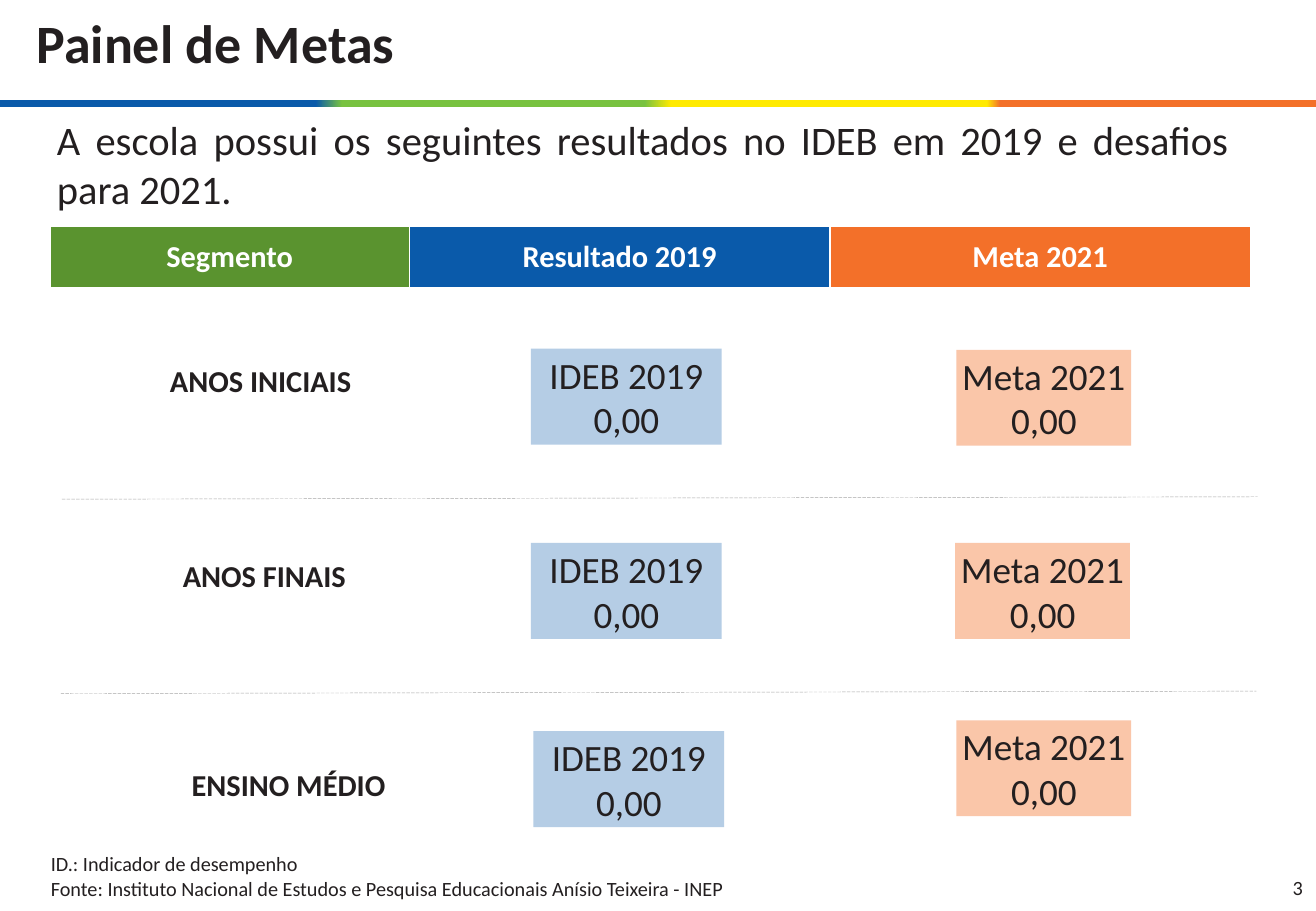
from lxml import etree
from pptx import Presentation
from pptx.dml.color import RGBColor
from pptx.enum.dml import MSO_LINE
from pptx.enum.shapes import MSO_CONNECTOR, MSO_SHAPE
from pptx.enum.text import MSO_ANCHOR, MSO_AUTO_SIZE, PP_ALIGN
from pptx.oxml.ns import qn
from pptx.util import Inches, Pt

LEFT, CENTER, RIGHT, JUSTIFY = PP_ALIGN.LEFT, PP_ALIGN.CENTER, PP_ALIGN.RIGHT, PP_ALIGN.JUSTIFY
TOP, MIDDLE, BOTTOM = MSO_ANCHOR.TOP, MSO_ANCHOR.MIDDLE, MSO_ANCHOR.BOTTOM
RECTANGLE, STRAIGHT = MSO_SHAPE.RECTANGLE, MSO_CONNECTOR.STRAIGHT
LONG_DASH, NO_AUTOFIT = MSO_LINE.LONG_DASH, MSO_AUTO_SIZE.NONE

INK = RGBColor(0x23, 0x1F, 0x20)
WHITE = RGBColor(0xFF, 0xFF, 0xFF)
BLUE = RGBColor(0x0A, 0x5A, 0xAA)
LIME = RGBColor(0x78, 0xC2, 0x40)
GREEN = RGBColor(0x5A, 0x93, 0x2F)
YELLOW = RGBColor(0xFF, 0xEA, 0x01)
ORANGE = RGBColor(0xF3, 0x70, 0x29)
PEACH = RGBColor(0xFA, 0xC6, 0xA9)
GRAY = RGBColor(0xA6, 0xA6, 0xA6)


def format_text(frame, lines, size, align=LEFT, anchor=TOP, bold=False, color=INK):
    frame.text = "\n".join(lines)
    frame.word_wrap = True
    frame.vertical_anchor = anchor
    for paragraph in frame.paragraphs:
        paragraph.alignment = align
        font = paragraph.font
        font.name, font.size, font.bold = "Calibri", Pt(size), bold
        font.color.rgb = color


def add_text(left, top, width, height, lines, size, **style):
    box = slide.shapes.add_textbox(Inches(left), Inches(top), Inches(width), Inches(height))
    format_text(box.text_frame, lines, size, **style)


prs = Presentation()
prs.slide_width, prs.slide_height = Inches(10.83), Inches(7.5)
slide = prs.slides.add_slide(prs.slide_layouts[5])

# Title and four-colour stripe
title = slide.shapes.title
title.left, title.top, title.width, title.height = Inches(0.2), Inches(0.03), Inches(5.62), Inches(0.64)
format_text(title.text_frame, ["Painel de Metas"], 32, bold=True)
title.text_frame.auto_size = NO_AUTOFIT

stripe = slide.shapes.add_shape(RECTANGLE, 0, Inches(0.82), prs.slide_width, Inches(0.06))
stripe.shadow.inherit = False
stripe.line.fill.background()
stripe.fill.gradient()
stripe.fill.gradient_angle = 0
stops = stripe._element.spPr.find(qn("a:gradFill")).find(qn("a:gsLst"))
for stop in list(stops):
    stops.remove(stop)
for color, start, end in [(BLUE, 0, 24), (LIME, 26, 49), (YELLOW, 51, 75), (ORANGE, 76, 100)]:
    for position in (start, end):
        stop = etree.SubElement(stops, qn("a:gs"), pos=str(position * 1000))
        etree.SubElement(stop, qn("a:srgbClr"), val=str(color))

add_text(0.37, 0.9, 9.84, 0.69,
         ["A escola possui os seguintes resultados no IDEB em 2019 e desafios para 2021."],
         24, align=JUSTIFY)

# Column headings
headings = [("Segmento", 2.96, GREEN), ("Resultado 2019", 3.46, BLUE), ("Meta 2021", 3.46, ORANGE)]
table = slide.shapes.add_table(1, len(headings), Inches(0.41), Inches(1.86),
                               Inches(9.88), Inches(0.51)).table
for column, (heading, width, color) in enumerate(headings):
    table.columns[column].width = Inches(width)
    cell = table.cell(0, column)
    cell.fill.solid()
    cell.fill.fore_color.rgb = color
    format_text(cell.text_frame, [heading], 18, align=CENTER, bold=True, color=WHITE)
    cell.vertical_anchor = MIDDLE

# One row per segment: (left, top) of the label, result and goal
segments = [
    ("ANOS INICIAIS", (0.51, 2.74), (4.37, 2.87), (7.87, 2.88)),
    ("ANOS FINAIS", (0.54, 4.34), (4.37, 4.47), (7.86, 4.47)),
    ("ENSINO MÉDIO", (0.74, 6.06), (4.39, 6.02), (7.87, 5.93)),
]
for segment, label_at, result_at, goal_at in segments:
    add_text(*label_at, 3.27, 0.79, [segment], 18, align=CENTER, anchor=MIDDLE, bold=True)
    for (left, top), width, value, color, opacity in [
        (result_at, 1.57, "IDEB 2019 0,00", BLUE, 30),
        (goal_at, 1.44, "Meta 2021 0,00", PEACH, 100),
    ]:
        card = slide.shapes.add_shape(RECTANGLE, Inches(left), Inches(top), Inches(width), Inches(0.79))
        card.shadow.inherit = False
        card.line.fill.background()
        card.fill.solid()
        card.fill.fore_color.rgb = color
        if opacity < 100:
            fill_color = card._element.spPr.find(qn("a:solidFill"))[0]
            etree.SubElement(fill_color, qn("a:alpha"), val=str(opacity * 1000))
        frame = card.text_frame
        frame.margin_left = frame.margin_right = frame.margin_top = frame.margin_bottom = 0
        format_text(frame, [value], 22, align=CENTER, anchor=MIDDLE)

for left, top in [(0.51, 4.11), (0.5, 5.71)]:
    divider = slide.shapes.add_connector(STRAIGHT, Inches(left), Inches(top),
                                         Inches(left + 9.84), Inches(top - 0.02))
    divider.line.color.rgb = GRAY
    divider.line.width = Pt(0.25)
    divider.line.dash_style = LONG_DASH
    etree.SubElement(divider._element.spPr, qn("a:effectLst"))

# Footer
add_text(0.32, 6.87, 6.26, 0.59,
         ["ID.: Indicador de desempenho",
          "Fonte: Instituto Nacional de Estudos e Pesquisa Educacionais Anísio Teixeira - INEP"],
         12, anchor=BOTTOM)
add_text(10.14, 7.11, 0.68, 0.39, ["3"], 12, align=RIGHT, anchor=MIDDLE)

prs.save("out.pptx")
